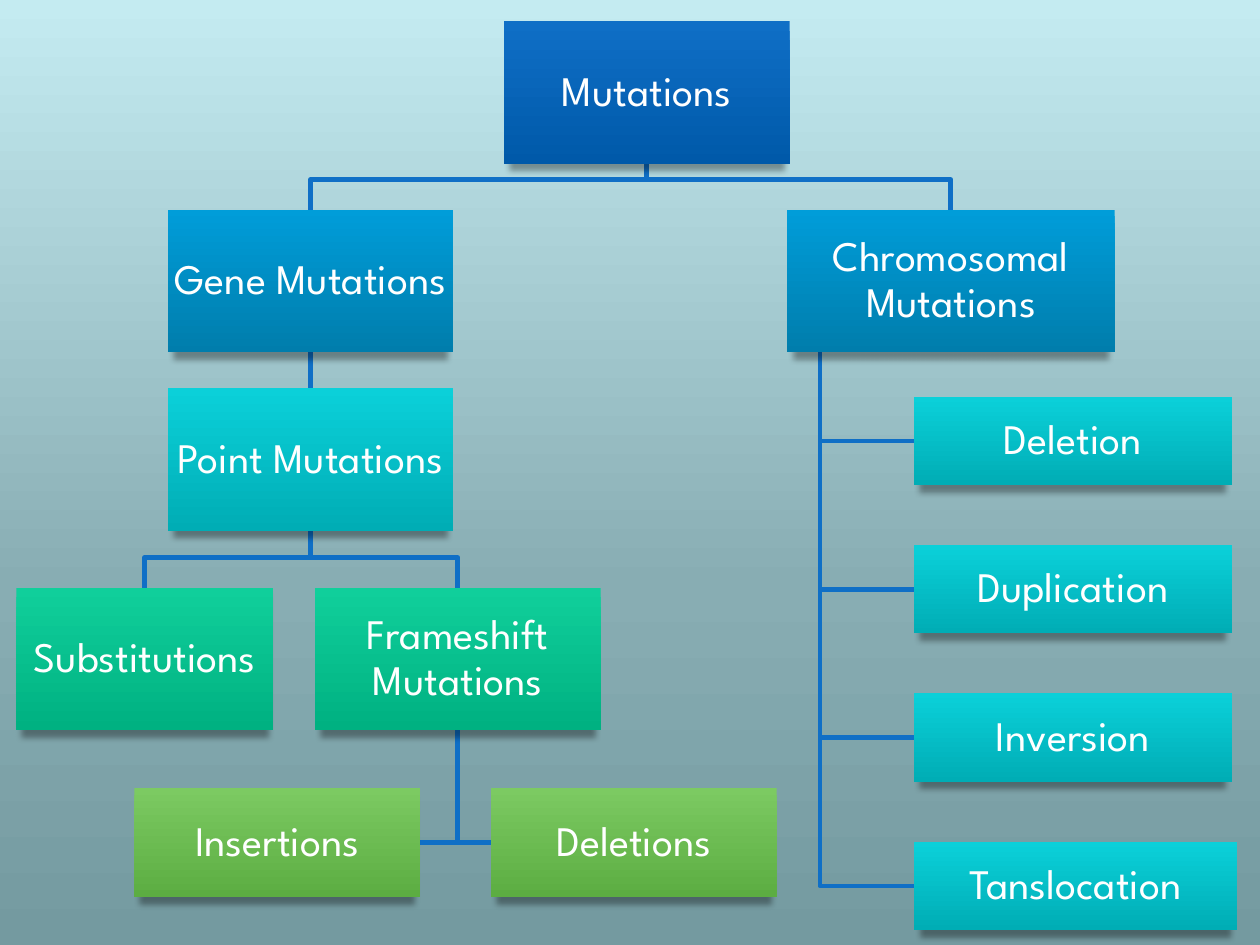
from copy import deepcopy
from lxml.etree import fromstring
from pptx import Presentation
from pptx.dml.color import RGBColor
from pptx.enum.shapes import MSO_CONNECTOR, MSO_SHAPE
from pptx.enum.text import MSO_ANCHOR, PP_ALIGN
from pptx.oxml.ns import qn
from pptx.util import Cm, Pt

# Content: name -> (text, left, row, width, level), lengths in cm
BOXES = {
    "root": ("Mutations", 10.16, "top", 5.76, 0),
    "gene": ("Gene Mutations", 3.38, "types", 5.76, 1),
    "point": ("Point Mutations", 3.38, "point", 5.76, 2),
    "subst": ("Substitutions", 0.33, "effects", 5.18, 3),
    "frame": ("Frameshift Mutations", 6.35, "effects", 5.76, 3),
    "ins": ("Insertions", 2.71, "causes", 5.76, 4),
    "del": ("Deletions", 9.9, "causes", 5.76, 4),
    "chrom": ("Chromosomal Mutations", 15.87, "types", 6.6, 1),
}
CHANGES = [("Deletion", 6.42), ("Duplication", 6.42),
           ("Inversion", 6.42), ("Tanslocation", 6.52)]
DROP_LINKS = [("root", "chrom"), ("root", "gene"), ("gene", "point"),
              ("point", "subst"), ("point", "frame")]
SIDE_LINKS = [("frame", "ins"), ("frame", "del")]

# Layout in cm: row -> (top, height)
ROWS = {"top": (0.43, 2.87), "types": (4.23, 2.87), "point": (7.83, 2.87),
        "effects": (11.85, 2.87), "causes": (15.88, 2.21)}
CHANGE_LEFT, CHANGE_TOP, CHANGE_STEP, CHANGE_H = 18.42, 8.0, 2.99, 1.78
BEND = 0.61  # distance from the crossbar down to a child box

THEME = {
    "font": "League Spartan",
    "size": 24,
    "text": "FFFFFF",
    "line": "0F6FC6",
    "line_width": 2.75,
    "background": [(0, "C4EBF1"), (0.62, "88ADB3"), (1, "749AA0")],
    "levels": [("0F6FC6", "0059A9"), ("009DD9", "007DAC"), ("0BD0D9", "00ADB5"),
               ("10CF9B", "00B181"), ("7CCA62", "5CAD42")],
}
A_NS = "http://schemas.openxmlformats.org/drawingml/2006/main"
SHADOW = (f'<a:effectLst xmlns:a="{A_NS}"><a:outerShdw blurRad="44450" dist="50800" '
          'dir="5400000" sx="96000" rotWithShape="0"><a:srgbClr val="000000">'
          '<a:alpha val="34000"/></a:srgbClr></a:outerShdw></a:effectLst>')


def set_gradient(fill, element, stops):
    fill.gradient()
    fill.gradient_angle = 270
    gs_list = element.find(".//" + qn("a:gsLst"))
    while len(gs_list) < len(stops):
        gs_list.append(deepcopy(gs_list[-1]))
    for stop, (position, color) in zip(fill.gradient_stops, stops):
        stop.position = position
        stop.color.rgb = RGBColor.from_string(color)


def add_text(sp, text, size=THEME["size"], color=THEME["text"], font=THEME["font"]):
    tf = sp.text_frame
    tf.word_wrap = True
    tf.vertical_anchor = MSO_ANCHOR.MIDDLE
    tf.margin_left = tf.margin_right = tf.margin_top = tf.margin_bottom = Cm(0.05)
    p = tf.paragraphs[0]
    p.alignment = PP_ALIGN.CENTER
    p.line_spacing = 0.9
    r = p.add_run()
    r.text = text
    r.font.size = Pt(size)
    r.font.name = font
    r.font.color.rgb = RGBColor.from_string(color)


def add_box(shapes, text, left, top, width, height, level):
    sp = shapes.add_shape(MSO_SHAPE.RECTANGLE, Cm(left), Cm(top), Cm(width), Cm(height))
    colors = THEME["levels"][level]
    set_gradient(sp.fill, sp._element.spPr, list(enumerate(colors)))
    sp.line.fill.background()
    sp._element.spPr.append(fromstring(SHADOW))
    add_text(sp, text)


def add_link(shapes, points):
    points = [(Cm(x), Cm(y)) for x, y in points]
    if len(points) == 2:
        sp = shapes.add_connector(MSO_CONNECTOR.STRAIGHT, *points[0], *points[1])
    else:
        builder = shapes.build_freeform(*points[0])
        builder.add_line_segments(points[1:], close=False)
        sp = builder.convert_to_shape()
        sp.fill.background()
    sp.line.color.rgb = RGBColor.from_string(THEME["line"])
    sp.line.width = Pt(THEME["line_width"])
    sp._element.spPr.append(fromstring(f'<a:effectLst xmlns:a="{A_NS}"/>'))


def center(name):
    _, left, _, width, _ = BOXES[name]
    return left + width / 2


def top_of(name):
    return ROWS[BOXES[name][2]][0]


def bottom_of(name):
    return sum(ROWS[BOXES[name][2]])


def main():
    prs = Presentation()
    prs.slide_width, prs.slide_height = Cm(25.4), Cm(19.05)
    slide = prs.slides.add_slide(prs.slide_layouts[6])
    set_gradient(slide.background.fill, slide._element, THEME["background"])
    shapes = slide.shapes

    # Links down through a crossbar
    for parent, child in DROP_LINKS:
        x0, x1, y1 = center(parent), center(child), top_of(child)
        start, end = (x0, bottom_of(parent)), (x1, y1)
        bends = [] if x0 == x1 else [(x0, y1 - BEND), (x1, y1 - BEND)]
        add_link(shapes, [start, *bends, end])

    # Links down, then sideways into the near edge of the child
    for parent, child in SIDE_LINKS:
        x, (_, left, row, width, _) = center(parent), BOXES[child]
        y = ROWS[row][0] + ROWS[row][1] / 2
        edge = left if left > x else left + width
        add_link(shapes, [(x, bottom_of(parent)), (x, y), (edge, y)])

    # Chromosomal changes hang from a stem at a tenth of their parent's width
    stem = BOXES["chrom"][1] + BOXES["chrom"][3] / 10
    tops = [CHANGE_TOP + i * CHANGE_STEP for i in range(len(CHANGES))]
    for top in tops:
        y = top + CHANGE_H / 2
        add_link(shapes, [(stem, bottom_of("chrom")), (stem, y), (CHANGE_LEFT, y)])

    # Boxes
    for text, left, row, width, level in BOXES.values():
        top, height = ROWS[row]
        add_box(shapes, text, left, top, width, height, level)
    for (text, width), top in zip(CHANGES, tops):
        add_box(shapes, text, CHANGE_LEFT, top, width, CHANGE_H, 2)

    prs.save("out.pptx")


if __name__ == "__main__":
    main()
